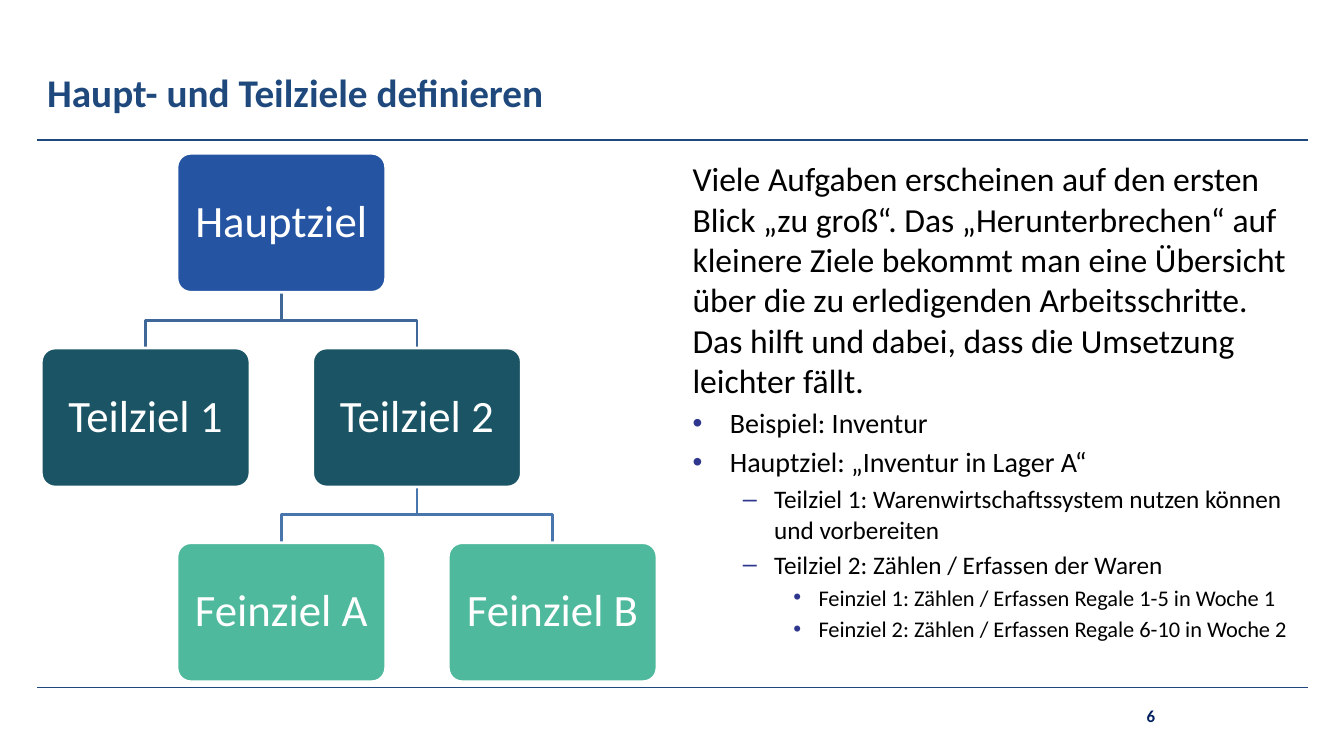
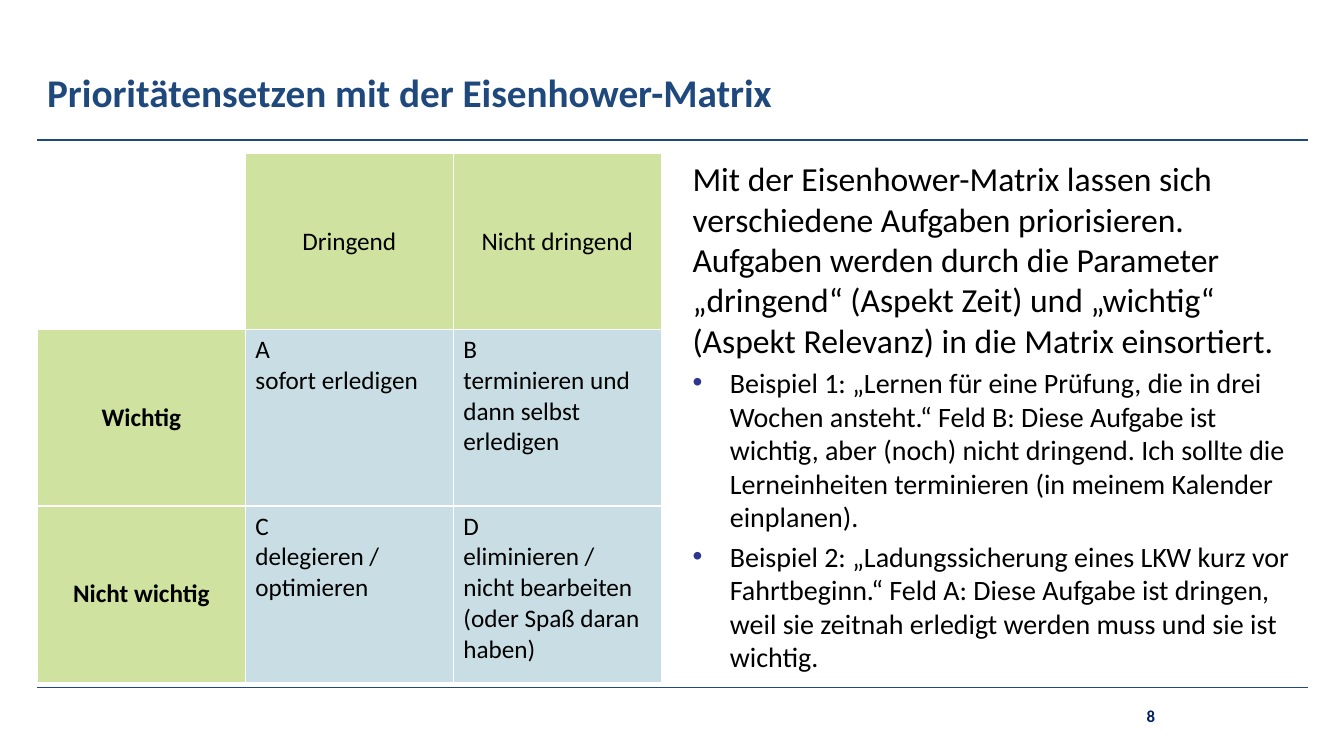
from lxml import etree
from pptx import Presentation
from pptx.dml.color import RGBColor
from pptx.enum.shapes import MSO_CONNECTOR, MSO_SHAPE
from pptx.enum.text import MSO_ANCHOR, PP_ALIGN
from pptx.oxml.ns import qn
from pptx.util import Inches, Pt

STRAIGHT = MSO_CONNECTOR.STRAIGHT
ROUNDED = MSO_SHAPE.ROUNDED_RECTANGLE
TOP, MIDDLE = MSO_ANCHOR.TOP, MSO_ANCHOR.MIDDLE
LEFT, CENTER = PP_ALIGN.LEFT, PP_ALIGN.CENTER

# Colours
BLACK = RGBColor(0x00, 0x00, 0x00)
WHITE = RGBColor(0xFF, 0xFF, 0xFF)
TITLE_BLUE = RGBColor(0x1F, 0x49, 0x7D)
NUMBER_BLUE = RGBColor(0x00, 0x20, 0x60)
BULLET_BLUE = RGBColor(0x2F, 0x36, 0x8D)
MAIN_GOAL = RGBColor(0x25, 0x54, 0xA3)
SUB_GOAL = RGBColor(0x1A, 0x54, 0x65)
FINE_GOAL = RGBColor(0x4E, 0xB9, 0x9C)
UPPER_BRANCH = RGBColor(0x3F, 0x67, 0x97)
LOWER_BRANCH = RGBColor(0x48, 0x75, 0xAC)
HEADING_GREEN = RGBColor(0xA3, 0xC7, 0x41)
FIELD_TEAL = RGBColor(0x4A, 0x92, 0xA7)

# Shared layout, in inches
FONT = "Calibri"
MARGIN, RIGHT_EDGE = 0.37, 12.97
CONTENT_TOP, CONTENT_W, CONTENT_H = 1.52, 6.19, 5.25
BODY_LEFT = 6.77

# Body levels: size, left indent, hanging indent, bullet
LEVELS = [(24, 0, 0, None), (20, 0.37, 0.37, "•"),
          (18, 0.81, 0.31, "–"), (16, 1.25, 0.25, "•")]

# Goal tree: each column step is 0.65 of a box, each row step 1.4 of a box
BOX_W, BOX_H = 2.07, 1.38
TREE_LEFT = 0.41
COLUMN_STEP, ROW_STEP = BOX_W * 0.65, BOX_H * 1.4


class Deck:
    def __init__(self):
        self.prs = Presentation()
        self.prs.slide_width, self.prs.slide_height = Inches(13.33), Inches(7.5)
        self.slide = None

    def new_slide(self, title, number):
        self.slide = self.prs.slides.add_slide(self.prs.slide_layouts[6])
        self.rule(1.39, 1.5)
        self.rule(6.82, 1)
        self.label(title, (MARGIN, 0.48, 9.54, 0.87), 28, TITLE_BLUE, LEFT)
        self.label(number, (9.86, 6.9, 3.11, 0.4), 12, NUMBER_BLUE, CENTER)

    def rule(self, y, weight):
        rule = self.slide.shapes.add_connector(
            STRAIGHT, Inches(MARGIN), Inches(y), Inches(RIGHT_EDGE), Inches(y))
        rule.line.color.rgb = TITLE_BLUE
        rule.line.width = Pt(weight)
        etree.SubElement(rule.element.spPr, qn("a:effectLst"))

    def text_frame(self, box, anchor):
        frame = self.slide.shapes.add_textbox(*map(Inches, box)).text_frame
        frame.word_wrap = True
        frame.vertical_anchor = anchor
        return frame

    def style(self, paragraph, size, color, align=LEFT, bold=False):
        paragraph.alignment = align
        font = paragraph.font
        font.name, font.size, font.bold = FONT, Pt(size), bold
        font.color.rgb = color

    def label(self, text, box, size, color, align):
        frame = self.text_frame(box, MIDDLE)
        frame.text = text
        self.style(frame.paragraphs[0], size, color, align, bold=True)

    def body(self, items):
        frame = self.text_frame((BODY_LEFT, CONTENT_TOP, CONTENT_W, CONTENT_H), TOP)
        for index, (level, text) in enumerate(items):
            paragraph = frame.add_paragraph() if index else frame.paragraphs[0]
            paragraph.text = text
            size, indent, hanging, bullet = LEVELS[level]
            if bullet:
                self.bullet(paragraph, indent, hanging, bullet)
            if index:
                paragraph.space_before = Pt(size * 0.2)
            self.style(paragraph, size, BLACK)

    def bullet(self, paragraph, indent, hanging, char):
        props = paragraph._p.get_or_add_pPr()
        props.set("marL", str(Inches(indent)))
        props.set("indent", str(-Inches(hanging)))
        color = etree.SubElement(props, qn("a:buClr"))
        etree.SubElement(color, qn("a:srgbClr"), val=str(BULLET_BLUE))
        etree.SubElement(props, qn("a:buFont"), typeface="Arial")
        etree.SubElement(props, qn("a:buChar"), char=char)

    def goal(self, text, column, row, color):
        box = self.slide.shapes.add_shape(
            ROUNDED, Inches(TREE_LEFT + column * COLUMN_STEP),
            Inches(CONTENT_TOP + row * ROW_STEP), Inches(BOX_W), Inches(BOX_H))
        box.adjustments[0] = 0.1
        box.shadow.inherit = False
        box.fill.solid()
        box.fill.fore_color.rgb = color
        box.line.color.rgb = WHITE
        box.line.width = Pt(2)
        frame = box.text_frame
        frame.word_wrap = True
        frame.vertical_anchor = MIDDLE
        frame.margin_left = frame.margin_right = Inches(0.13)
        frame.text = text
        frame.paragraphs[0].line_spacing = 0.9
        self.style(frame.paragraphs[0], 32, WHITE, CENTER)

    def branch(self, parent_column, child_column, parent_row, color):
        start_x, end_x = (Inches(TREE_LEFT + BOX_W / 2 + column * COLUMN_STEP)
                          for column in (parent_column, child_column))
        start = CONTENT_TOP + parent_row * ROW_STEP + BOX_H
        end = CONTENT_TOP + (parent_row + 1) * ROW_STEP
        middle = Inches((start + end) / 2)
        builder = self.slide.shapes.build_freeform(start_x, Inches(start))
        builder.add_line_segments(
            [(start_x, middle), (end_x, middle), (end_x, Inches(end))], close=False)
        elbow = builder.convert_to_shape()
        elbow.shadow.inherit = False
        elbow.fill.background()
        elbow.line.color.rgb = color
        elbow.line.width = Pt(2)

    def matrix(self, rows):
        count = len(rows)
        table = self.slide.shapes.add_table(
            count, count, Inches(MARGIN), Inches(CONTENT_TOP),
            Inches(CONTENT_W), Inches(CONTENT_H)).table
        table.first_row = table.horz_banding = False
        for r, row in enumerate(rows):
            for c, text in enumerate(row):
                cell = table.cell(r, c)
                self.borders(cell)
                if not text:
                    cell.fill.background()
                    continue
                heading = r == 0 or c == 0
                if heading:
                    self.tint(cell, HEADING_GREEN, 50)
                else:
                    self.tint(cell, FIELD_TEAL, 30)
                cell.vertical_anchor = MIDDLE if heading else TOP
                cell.text = text
                for paragraph in cell.text_frame.paragraphs:
                    self.style(paragraph, 18, BLACK, CENTER if heading else LEFT,
                               bold=c == 0)

    def borders(self, cell):
        props = cell._tc.get_or_add_tcPr()
        for side in "LRTB":
            border = etree.SubElement(props, qn(f"a:ln{side}"), w=str(Pt(1)))
            fill = etree.SubElement(border, qn("a:solidFill"))
            etree.SubElement(fill, qn("a:srgbClr"), val=str(WHITE))

    def tint(self, cell, color, opacity):
        cell.fill.solid()
        cell.fill.fore_color.rgb = color
        rgb = cell._tc.tcPr.find(f"{qn('a:solidFill')}/{qn('a:srgbClr')}")
        etree.SubElement(rgb, qn("a:alpha"), val=str(opacity * 1000))


def goals_slide(deck):
    deck.new_slide("Haupt- und Teilziele definieren", "6")
    deck.body([
        (0, "Viele Aufgaben erscheinen auf den ersten Blick „zu groß“. Das "
            "„Herunterbrechen“ auf kleinere Ziele bekommt man eine Übersicht über die "
            "zu erledigenden Arbeitsschritte. Das hilft und dabei, dass die Umsetzung "
            "leichter fällt."),
        (1, "Beispiel: Inventur"),
        (1, "Hauptziel: „Inventur in Lager A“"),
        (2, "Teilziel 1: Warenwirtschaftssystem nutzen können und vorbereiten"),
        (2, "Teilziel 2: Zählen / Erfassen der Waren"),
        (3, "Feinziel 1: Zählen / Erfassen Regale 1-5 in Woche 1"),
        (3, "Feinziel 2: Zählen / Erfassen Regale 6-10 in Woche 2"),
    ])
    # Branches lie behind the boxes
    for parent, row, color in ((1, 0, UPPER_BRANCH), (2, 1, LOWER_BRANCH)):
        for child in (parent - 1, parent + 1):
            deck.branch(parent, child, row, color)
    for text, column, row, color in (
            ("Hauptziel", 1, 0, MAIN_GOAL),
            ("Teilziel 1", 0, 1, SUB_GOAL), ("Teilziel 2", 2, 1, SUB_GOAL),
            ("Feinziel A", 1, 2, FINE_GOAL), ("Feinziel B", 3, 2, FINE_GOAL)):
        deck.goal(text, column, row, color)


def priorities_slide(deck):
    deck.new_slide("Prioritätensetzen mit der Eisenhower-Matrix", "8")
    deck.body([
        (0, "Mit der Eisenhower-Matrix lassen sich verschiedene Aufgaben priorisieren. "
            "Aufgaben werden durch die Parameter „dringend“ (Aspekt Zeit) und „wichtig“ "
            "(Aspekt Relevanz) in die Matrix einsortiert."),
        (1, "Beispiel 1: „Lernen für eine Prüfung, die in drei Wochen ansteht.“ Feld B: "
            "Diese Aufgabe ist wichtig, aber (noch) nicht dringend. Ich sollte die "
            "Lerneinheiten terminieren (in meinem Kalender einplanen)."),
        (1, "Beispiel 2: „Ladungssicherung eines LKW kurz vor Fahrtbeginn.“ Feld A: "
            "Diese Aufgabe ist dringen, weil sie zeitnah erledigt werden muss und sie "
            "ist wichtig."),
    ])
    # \v breaks a line, \n starts a paragraph
    deck.matrix([
        ["", "Dringend", "Nicht dringend"],
        ["Wichtig", "A\vsofort erledigen", "B\vterminieren und dann selbst erledigen"],
        ["Nicht wichtig", "C\vdelegieren / optimieren",
         "D\veliminieren / nicht bearbeiten\n(oder Spaß daran haben)"],
    ])


def main():
    deck = Deck()
    goals_slide(deck)
    priorities_slide(deck)
    deck.prs.save("out.pptx")


if __name__ == "__main__":
    main()
